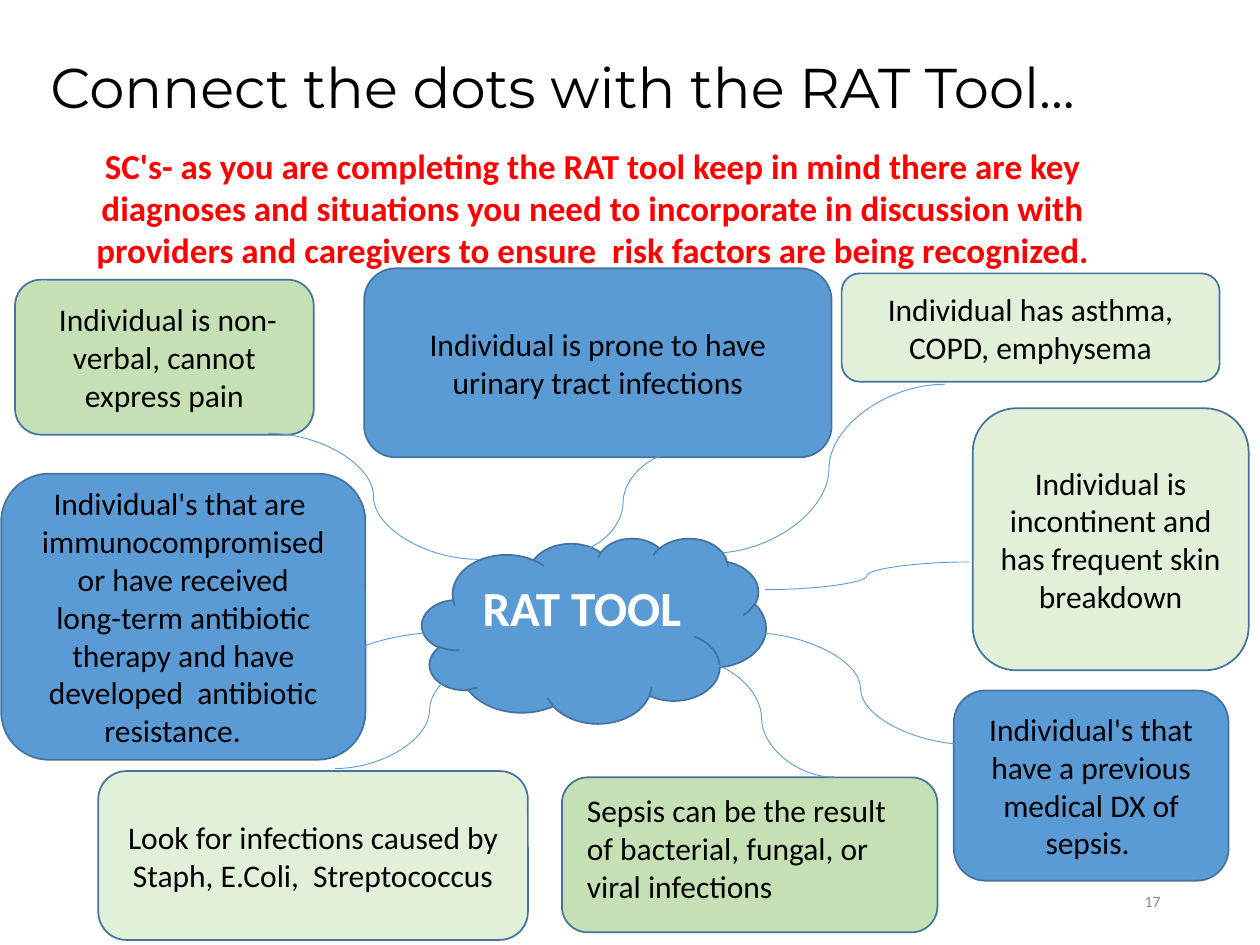
from lxml import etree
from pptx import Presentation
from pptx import util as u
from pptx.dml import color
from pptx.enum import shapes, text
from pptx.oxml import ns

WIDTH, HEIGHT = 10, 7.5
BLUE, GREEN, PALE, EDGE = "5B9BD5", "C5E0B4", "E2F0D9", "43739E"
BLACK, WHITE, RED, GREY = "000000", "FFFFFF", "FF0000", "8C8C8C"
LEFT, CENTER, RIGHT = text.PP_ALIGN.LEFT, text.PP_ALIGN.CENTER, text.PP_ALIGN.RIGHT
TOP, MIDDLE = text.MSO_ANCHOR.TOP, text.MSO_ANCHOR.MIDDLE

FACTORS = [
    ((0.12, 2.22, 2.37, 1.23), GREEN, [" Individual is non-verbal, cannot express pain"]),
    ((2.89, 2.13, 3.71, 1.5), BLUE, ["Individual is prone to have urinary tract infections"]),
    ((6.68, 2.17, 3, 0.86), PALE, ["Individual has asthma, COPD, emphysema"]),
    ((7.72, 3.24, 2.19, 2.08), PALE, ["Individual is incontinent and has frequent skin breakdown"]),
    ((7.57, 5.48, 2.18, 1.51), BLUE, ["Individual's that have a previous medical DX of sepsis. "]),
    ((4.46, 6.17, 2.98, 1.23), GREEN, []),
    ((0.78, 6.12, 3.41, 1.34), PALE, ["Look for infections caused by Staph, E.Coli,  Streptococcus"]),
    ((0.01, 3.76, 2.89, 2.27), BLUE, [
        "Individual's that are ",
        "immunocompromised or have received",
        "long-term antibiotic therapy and have developed  antibiotic resistance.   ",
    ]),
]

LINKS = [
    ((5.95, 5.02), (7.71, 5.91)),
    ((7.5, 3.05), (5.66, 4.39)),
    ((7.69, 4.46), (6.07, 4.68)),
    ((6.63, 6.17), (5.46, 5.23)),
    ((3.63, 5.01), (1.91, 5.46)),
    ((4.16, 5.17), (2.66, 6.1)),
    ((3.8, 4.44), (2.13, 3.44)),
    ((5.39, 3.59), (4.5, 4.39)),
]


def rgb(value):
    return color.RGBColor.from_string(value)


def inches(lengths):
    return [u.Inches(length) for length in lengths]


def write(shape, lines, size, ink, align=CENTER, anchor=MIDDLE, font="Calibri", bold=False):
    frame = shape.text_frame
    frame.text = "\n".join(lines)
    frame.word_wrap = True
    frame.auto_size = text.MSO_AUTO_SIZE.NONE
    frame.vertical_anchor = anchor
    for paragraph in frame.paragraphs:
        paragraph.alignment = align
        paragraph.font.name = font
        paragraph.font.size = u.Pt(size)
        paragraph.font.bold = bold
        paragraph.font.color.rgb = rgb(ink)


def add_label(slide, box, line, size, ink, **style):
    write(slide.shapes.add_textbox(*inches(box)), [line], size, ink, **style)


def add_bubble(slide, kind, box, fill):
    shape = slide.shapes.add_shape(kind, *inches(box))
    shape.shadow.inherit = False
    shape.fill.solid()
    shape.fill.fore_color.rgb = rgb(fill)
    shape.line.color.rgb = rgb(EDGE)
    shape.line.width = u.Pt(1)
    return shape


def add_title(slide, box):
    title = slide.shapes.title
    title.left, title.top, title.width, title.height = inches(box)
    write(title, ["Connect the dots with the RAT Tool..."], 32, BLACK,
          align=LEFT, anchor=TOP, font="Montserrat")


def add_hub(slide, box):
    cloud = add_bubble(slide, shapes.MSO_SHAPE.CLOUD, box, BLUE)
    write(cloud, ["RAT TOOL"], 28, WHITE, bold=True)
    cloud.text_frame.margin_bottom = u.Inches(0.35)


def add_factors(slide):
    for box, fill, lines in FACTORS:
        shape = add_bubble(slide, shapes.MSO_SHAPE.ROUNDED_RECTANGLE, box, fill)
        if lines:
            write(shape, lines, 18, BLACK)


def add_links(slide):
    for start, end in LINKS:
        link = slide.shapes.add_connector(
            shapes.MSO_CONNECTOR.CURVE, *inches(start + end))
        link.line.color.rgb = rgb(BLUE)
        link.line.width = u.Pt(0.5)
        etree.SubElement(link._element.spPr, ns.qn("a:effectLst"))


def main():
    presentation = Presentation()
    presentation.slide_width, presentation.slide_height = inches((WIDTH, HEIGHT))
    slide = presentation.slides.add_slide(presentation.slide_layouts[5])
    add_title(slide, (0.3, 0.37, 9.45, 0.94))
    add_label(slide, (7.06, 6.95, 2.25, 0.4), "17", 9, GREY, align=RIGHT)
    add_label(slide, (0.24, 1.1, 8.93, 1.11),
              "SC's- as you are completing the RAT tool keep in mind there are key "
              "diagnoses and situations you need to incorporate in discussion with "
              "providers and caregivers to ensure  risk factors are being recognized.",
              20, RED, anchor=TOP, bold=True)
    add_hub(slide, (3.35, 4.27, 2.73, 1.47))
    add_factors(slide)
    add_links(slide)
    add_label(slide, (4.56, 6.23, 2.8, 1.31),
              "Sepsis can be the result of bacterial, fungal, or viral infections",
              18, BLACK, align=LEFT, anchor=TOP)
    presentation.save("out.pptx")


if __name__ == "__main__":
    main()
